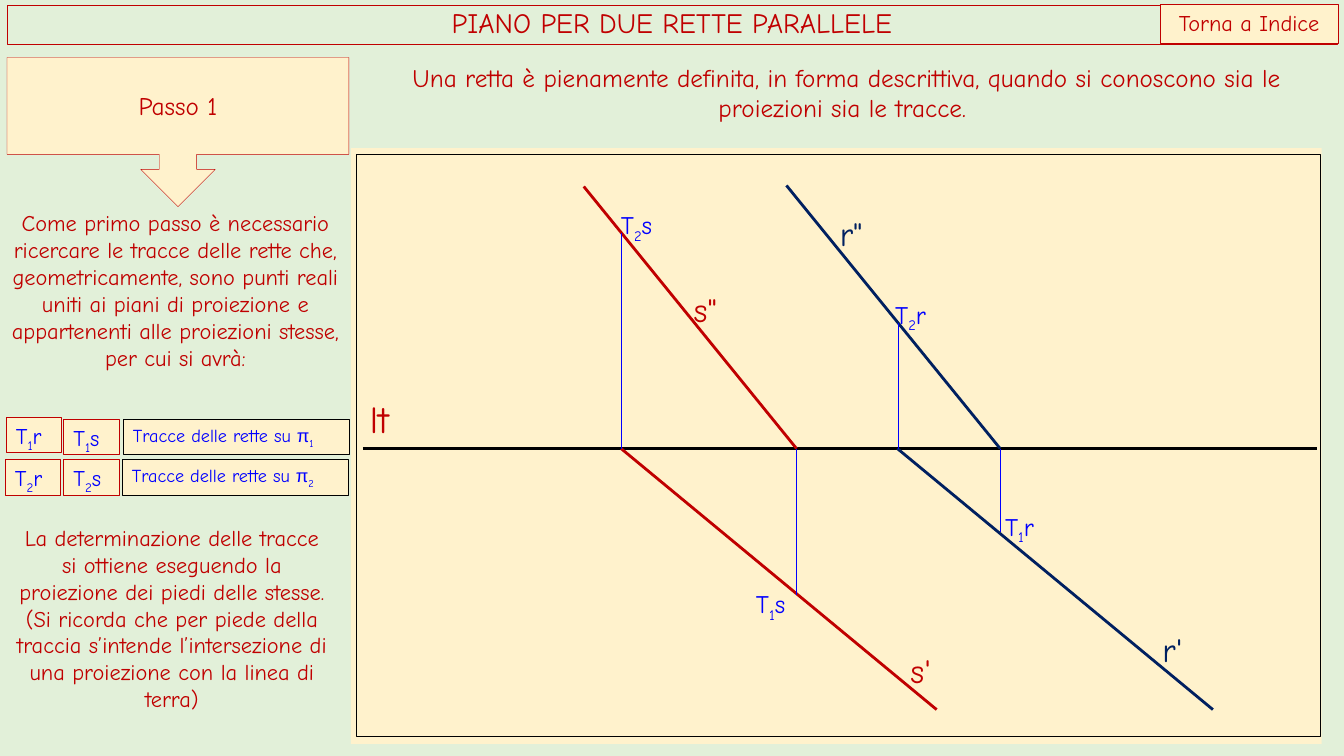
from dataclasses import dataclass

from lxml.etree import SubElement
from pptx import Presentation
from pptx.dml.color import RGBColor
from pptx.enum.shapes import MSO_CONNECTOR, MSO_SHAPE
from pptx.enum.text import MSO_ANCHOR as Anchor
from pptx.enum.text import MSO_AUTO_SIZE as AutoSize
from pptx.enum.text import PP_ALIGN as Align
from pptx.oxml.ns import qn
from pptx.util import Inches, Pt

GREEN = RGBColor(0xE2, 0xF0, 0xD9)
CREAM = RGBColor(0xFF, 0xF2, 0xCC)
RED = RGBColor(0xC0, 0x00, 0x00)
BLUE = RGBColor(0x00, 0x00, 0xFF)
NAVY = RGBColor(0x00, 0x20, 0x60)
BLACK = RGBColor(0x00, 0x00, 0x00)
FONT = "Comic Neue"
THIN = 0.25


@dataclass
class Run:
    text: str
    font: str = FONT
    subscript: bool = False


@dataclass
class Box:
    left: float
    top: float
    width: float
    height: float
    runs: list[Run]
    size: float = 16
    color: RGBColor = RED
    fill: RGBColor | None = None
    line: RGBColor | None = None
    line_width: float = THIN
    align: Align = Align.LEFT
    anchor: Anchor = Anchor.TOP
    preset: MSO_SHAPE = MSO_SHAPE.RECTANGLE
    grow: bool = True
    tight: bool = False


@dataclass
class Segment:
    start: tuple[float, float]
    end: tuple[float, float]
    color: RGBColor
    width: float = 0


def trace(plane: int, line_name: str) -> list[Run]:
    return [Run("T"), Run(str(plane), subscript=True), Run(line_name)]


def fill_text(shape, box: Box) -> None:
    frame = shape.text_frame
    frame.word_wrap = not box.tight
    frame.auto_size = AutoSize.SHAPE_TO_FIT_TEXT if box.grow else AutoSize.NONE
    frame.vertical_anchor = box.anchor
    if box.tight:
        frame.margin_left = frame.margin_right = 0
        frame.margin_top = frame.margin_bottom = 0
    paragraph = frame.paragraphs[0]
    paragraph.alignment = box.align
    for item in box.runs:
        run = paragraph.add_run()
        run.text = item.text
        run.font.name = item.font
        run.font.size = Pt(box.size)
        run.font.color.rgb = box.color
        if item.subscript:
            run.font._element.set("baseline", "-25000")


def set_line(shape, box: Box) -> None:
    if box.line is None:
        shape.line.fill.background()
    else:
        shape.line.color.rgb = box.line
        shape.line.width = Pt(box.line_width)


def draw_box(slide, box: Box) -> None:
    area = [Inches(n) for n in (box.left, box.top, box.width, box.height)]
    if box.fill is None:
        shape = slide.shapes.add_textbox(*area)
    else:
        shape = slide.shapes.add_shape(box.preset, *area)
        shape.shadow.inherit = False
        shape.fill.solid()
        shape.fill.fore_color.rgb = box.fill
        set_line(shape, box)
    fill_text(shape, box)


def draw_title(slide, box: Box) -> None:
    title = slide.shapes.title
    title.left, title.top = Inches(box.left), Inches(box.top)
    title.width, title.height = Inches(box.width), Inches(box.height)
    set_line(title, box)
    fill_text(title, box)
    title.text_frame.paragraphs[0].line_spacing = 0.9


def draw_segment(slide, segment: Segment) -> None:
    ends = [Inches(n) for n in (*segment.start, *segment.end)]
    connector = slide.shapes.add_connector(MSO_CONNECTOR.STRAIGHT, *ends)
    connector.line.color.rgb = segment.color
    connector.line.width = Pt(segment.width)
    SubElement(connector._element.spPr, qn("a:effectLst"))


TITLE = Box(0.07, 0.05, 13.19, 0.39, [Run("PIANO PER DUE RETTE PARALLELE")], 20, line=RED,
            align=Align.CENTER, anchor=Anchor.MIDDLE, grow=False)

# Header button, step callout and explanations
EXPLANATIONS = [
    Box(11.51, 0.04, 1.76, 0.39, [Run("Torna a Indice")], fill=CREAM, line=RED,
        align=Align.CENTER),
    Box(0.07, 0.57, 3.39, 1.48, [Run("Passo 1")], 18, fill=CREAM, line=RED, align=Align.CENTER,
        anchor=Anchor.MIDDLE, preset=MSO_SHAPE.DOWN_ARROW_CALLOUT, grow=False),
    Box(3.67, 0.57, 9.45, 0.71, [Run(
        "Una retta è pienamente definita, in forma descrittiva, quando si conoscono "
        "sia le proiezioni sia le tracce. ")], 18, align=Align.CENTER),
    Box(0, 2.03, 3.48, 1.99, [Run(
        "Come primo passo è necessario ricercare le tracce delle rette che, "
        "geometricamente, sono punti reali uniti ai piani di proiezione e "
        "appartenenti alle proiezioni stesse, per cui si avrà:")], align=Align.CENTER),
    Box(0.06, 5.15, 3.29, 2.26, [Run(
        "La determinazione delle tracce si ottiene eseguendo la proiezione dei piedi "
        "delle stesse. (Si ricorda che per piede della traccia s’intende "
        "l’intersezione di una proiezione con la linea di terra)")], align=Align.CENTER),
]

# Legend: one row for each projection plane
LEGEND = []
for plane, r_left, r_top, top, note_left in ((1, 0.06, 4.14, 4.16, 1.22),
                                             (2, 0.05, 4.56, 4.56, 1.21)):
    note = [Run("Tracce delle rette su "), Run("π", "Arial"), Run(str(plane), subscript=True)]
    LEGEND += [
        Box(r_left, r_top, 0.55, 0.35, trace(plane, "r"), 16, BLUE, CREAM, RED),
        Box(0.63, top, 0.55, 0.35, trace(plane, "s"), 16, BLUE, CREAM, RED),
        Box(note_left, top, 2.24, 0.35, note, 13, BLUE, CREAM, BLACK),
    ]

# Drawing panel and names of the lines
PANEL = [
    Box(3.48, 1.47, 9.63, 5.91, [], fill=CREAM, grow=False),
    Box(3.54, 1.53, 9.56, 5.78, [], fill=CREAM, line=BLACK, line_width=0, grow=False),
]
LINE_NAMES = [
    Box(left, top, 0.3, height, [Run(name)], size, color, CREAM, tight=True)
    for name, left, top, height, size, color in (
        ("lt", 3.67, 3.93, 0.46, 27, RED),
        ("r'", 11.53, 6.24, 0.41, 24, NAVY),
        ('r"', 8.33, 2.11, 0.41, 24, NAVY),
        ('s"', 6.88, 2.87, 0.41, 24, RED),
        ("s'", 9.03, 6.45, 0.41, 24, RED),
    )
]

# Ground line, projections and vertical reference lines
GROUND = 4.45
SEGMENTS = [
    Segment((3.6, GROUND), (13.06, GROUND), BLACK),
    Segment((7.9, GROUND), (5.79, 1.85), RED),
    Segment((9.29, 7.04), (6.16, GROUND), RED),
    Segment((9.92, GROUND), (7.8, 1.84), NAVY),
    Segment((12.03, 7.04), (8.9, GROUND), NAVY),
] + [
    Segment((x, GROUND), (x, y), BLUE, THIN)
    for x, y in ((7.9, 5.9), (6.16, 2.31), (8.91, 3.2), (9.92, 5.28))
]

TRACE_NAMES = [
    Box(left, top, 0.6, 0.4, trace(plane, name), 18, BLUE)
    for plane, name, left, top in ((1, "r", 9.87, 5.02), (2, "r", 8.78, 2.92),
                                   (2, "s", 6.06, 2.03), (1, "s", 7.4, 5.79))
]


def main() -> None:
    presentation = Presentation()
    presentation.slide_width, presentation.slide_height = Inches(13.33), Inches(7.5)
    slide = presentation.slides.add_slide(presentation.slide_layouts[5])
    slide.background.fill.solid()
    slide.background.fill.fore_color.rgb = GREEN
    draw_title(slide, TITLE)
    for box in EXPLANATIONS + LEGEND + PANEL + LINE_NAMES:
        draw_box(slide, box)
    for segment in SEGMENTS:
        draw_segment(slide, segment)
    for box in TRACE_NAMES:
        draw_box(slide, box)
    presentation.save("out.pptx")


if __name__ == "__main__":
    main()
